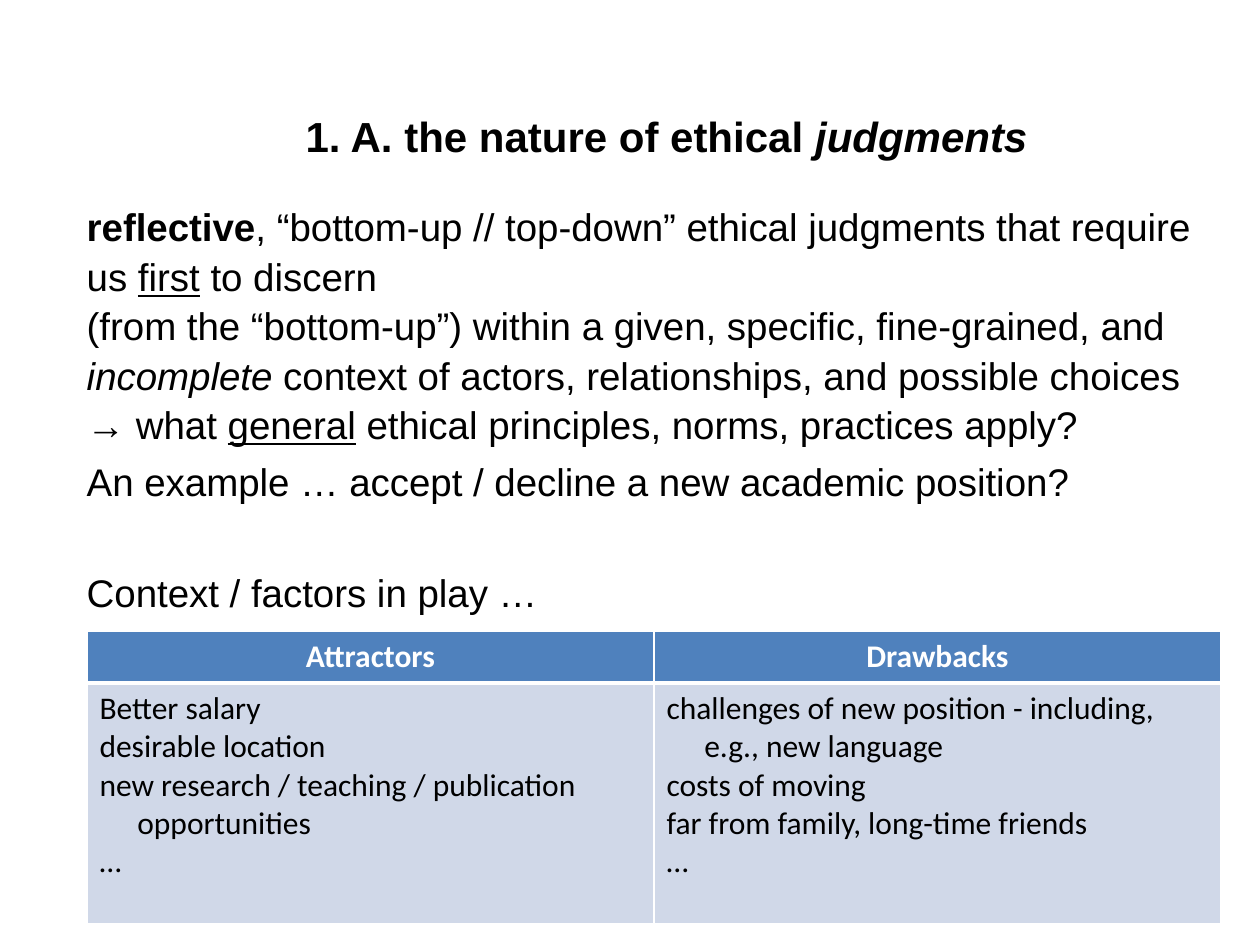
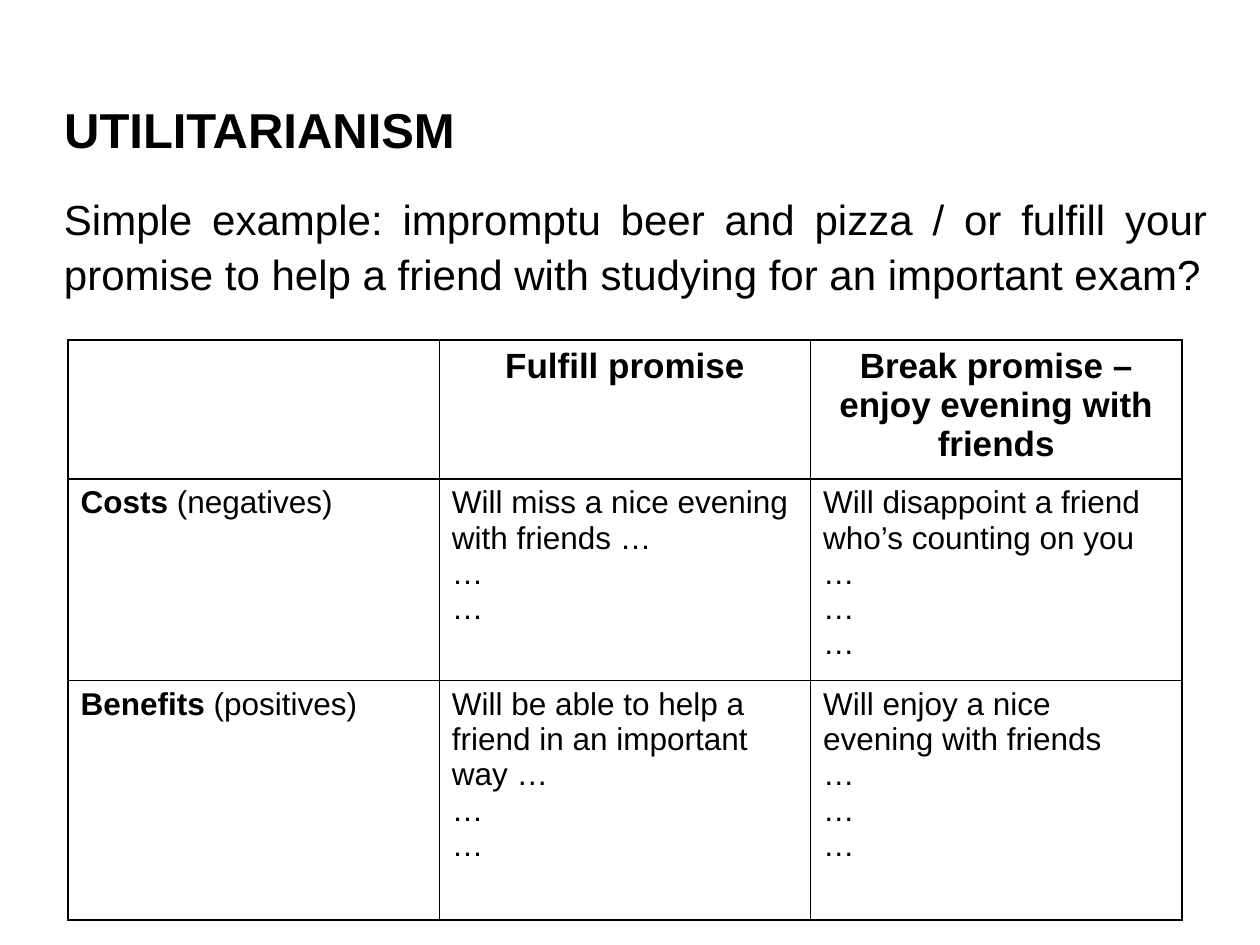
"""Build two slides on ethical judgments and utilitarian weighing."""
from lxml import etree
from pptx import Presentation
from pptx.dml.color import RGBColor
from pptx.enum.text import MSO_ANCHOR, PP_ALIGN
from pptx.oxml.ns import qn
from pptx.util import Inches, Pt

BLACK = RGBColor(0x00, 0x00, 0x00)
WHITE = RGBColor(0xFF, 0xFF, 0xFF)
BLUE = RGBColor(0x4F, 0x81, 0xBD)
PALE = RGBColor(0xD0, 0xD8, 0xE8)
LEFT, CENTER, JUST = PP_ALIGN.LEFT, PP_ALIGN.CENTER, PP_ALIGN.JUSTIFY
TOP, MIDDLE = MSO_ANCHOR.TOP, MSO_ANCHOR.MIDDLE
SIDES = ("lnL", "lnR", "lnT", "lnB")
HANG = 0.3

SLIDES = [
    {
        "title": [("1. A. the nature of ethical ", ""), ("judgments", "i")],
        "title_at": (1.08, 0.76, 8.42, 0.63),
        "title_font": (24, CENTER),
        "body": [
            [("reflective", "b"),
             (", “bottom-up // top-down” ethical judgments that require us ", ""),
             ("first", "u"),
             (" to discern\n(from the “bottom-up”) within a given, specific, "
              "fine-grained, and ", ""),
             ("incomplete", "i"),
             (" context of actors, relationships, and possible choices → what ", ""),
             ("general", "u"),
             (" ethical principles, norms, practices apply?", "")],
            "An example … accept / decline a new academic position?",
            "Context / factors in play …",
        ],
        "body_at": (0.59, 1.54, 9.13, 3.4),
        "body_font": (22, LEFT),
        "gaps": (0, 4.4, 35),
        "pitch": 1.07,
        "rows": [
            [["Attractors"], ["Drawbacks"]],
            [["Better salary", "desirable location",
              "new research / teaching / publication opportunities", "…"],
             ["challenges of new position - including, e.g., new language",
              "costs of moving", "far from family, long-time friends", "…"]],
        ],
        "grid_at": (0.69, 5.01, 9),
        "heights": (0.41, 1.91),
        "look": {"face": "Calibri", "sizes": (18, 18), "inks": (WHITE, BLACK),
                 "fills": (BLUE, PALE), "line": WHITE, "rule": 3, "hang": HANG},
    },
    {
        "title": "UTILITARIANISM",
        "title_at": (0.41, 0.76, 9.27, 0.53),
        "title_font": (28, LEFT),
        "body": ["Simple example: impromptu beer and pizza / or fulfill your promise "
                 "to help a friend with studying for an important exam?"],
        "body_at": (0.41, 1.45, 9.27, 1),
        "body_font": (24, JUST),
        "gaps": (0,),
        "pitch": 1.09,
        "rows": [
            [[""], ["Fulfill promise"], ["Break promise – enjoy evening with friends"]],
            [[[("Costs", "b"), (" (negatives)", "")]],
             ["Will miss a nice evening with friends …", "…", "…"],
             ["Will disappoint a friend who’s counting on you …", "…", "…"]],
            [[[("Benefits ", "b"), ("(positives)", "")]],
             ["Will be able to help a friend in an important way …", "…", "…"],
             ["Will enjoy a nice evening with friends", "…", "…", "…"]],
        ],
        "grid_at": (0.54, 2.7, 8.84),
        "heights": (1.1, 1.6, 1.9),
        "look": {"face": "Arial", "sizes": (20, 18), "inks": (BLACK, BLACK),
                 "fills": (None, None), "line": BLACK, "rule": 1, "hang": 0},
    },
]


def put(frame, paras, size, align, face="Arial", ink=BLACK, bold=False,
        gaps=None, pitch=None, hang=0):
    """Write styled paragraphs into a text frame."""
    frame.word_wrap = True
    for i, runs in enumerate(paras):
        para = frame.add_paragraph() if i else frame.paragraphs[0]
        if hang:
            props = para._p.get_or_add_pPr()
            props.set("marL", str(Inches(hang)))
            props.set("indent", str(-Inches(hang)))
        para.alignment = align
        para.space_before = Pt(gaps[i] if gaps else 0)
        if pitch:
            para.line_spacing = pitch
        font = para.font
        font.name, font.size, font.bold = face, Pt(size), bold
        font.color.rgb = ink
        for text, style in [(runs, "")] if isinstance(runs, str) else runs:
            for j, part in enumerate(text.split("\n")):
                if j:
                    para.add_line_break()
                run = para.add_run()
                run.text = part
                if "b" in style:
                    run.font.bold = True
                if "i" in style:
                    run.font.italic = True
                if "u" in style:
                    run.font.underline = True


def edge(cell, color, widths):
    """Draw the four borders of a cell."""
    props = cell._tc.get_or_add_tcPr()
    for side, width in zip(SIDES, widths):
        line = etree.SubElement(props, qn(f"a:{side}"), w=str(Pt(width)))
        fill = etree.SubElement(line, qn("a:solidFill"))
        etree.SubElement(fill, qn("a:srgbClr"), val=str(color))


def add_grid(slide, rows, at, heights, look):
    """Add a table with a header row and even columns."""
    left, top, width = at
    count = len(rows[0])
    table = slide.shapes.add_table(
        len(rows), count, Inches(left), Inches(top),
        Inches(width), Inches(sum(heights))).table
    table.first_row = table.horz_banding = False
    for col in table.columns:
        col.width = Inches(width / count)
    for r, row in enumerate(rows):
        table.rows[r].height = Inches(heights[r])
        kind = min(r, 1)
        above = look["rule"] if r == 1 else 1
        below = look["rule"] if r == 0 else 1
        for c, paras in enumerate(row):
            cell = table.cell(r, c)
            edge(cell, look["line"], (1, 1, above, below))
            fill = look["fills"][kind]
            if fill is None:
                cell.fill.background()
            else:
                cell.fill.solid()
                cell.fill.fore_color.rgb = fill
            put(cell.text_frame, paras, look["sizes"][kind],
                LEFT if r else CENTER, look["face"], look["inks"][kind],
                bold=r == 0, hang=look["hang"] if r else 0)


def add_slide(deck, data):
    """Add a slide with its title, body and table."""
    slide = deck.slides.add_slide(deck.slide_layouts[5])
    title = slide.shapes.title
    title.left, title.top, title.width, title.height = map(Inches, data["title_at"])
    title.text_frame.vertical_anchor = MIDDLE
    put(title.text_frame, [data["title"]], *data["title_font"], bold=True)
    body = slide.shapes.add_textbox(*map(Inches, data["body_at"])).text_frame
    body.vertical_anchor = TOP
    put(body, data["body"], *data["body_font"], gaps=data["gaps"], pitch=data["pitch"])
    add_grid(slide, data["rows"], data["grid_at"], data["heights"], data["look"])


def main():
    """Build and save the deck."""
    deck = Presentation()
    deck.slide_width, deck.slide_height = Inches(10), Inches(7.5)
    for data in SLIDES:
        add_slide(deck, data)
    deck.save("out.pptx")


if __name__ == "__main__":
    main()
